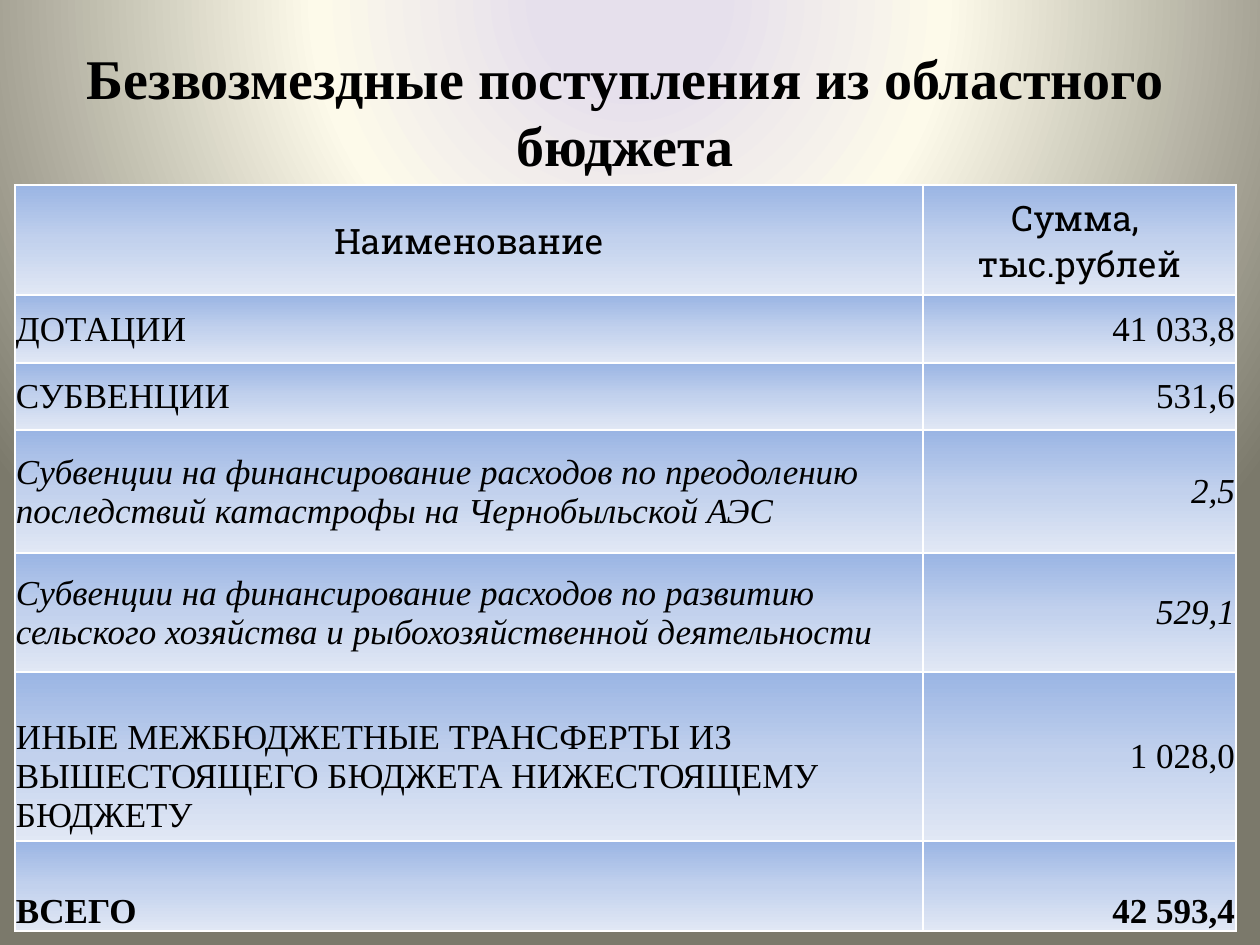
from lxml import etree
from pptx import Presentation
from pptx.dml.color import RGBColor
from pptx.enum.text import MSO_ANCHOR as Anchor, PP_ALIGN as Align
from pptx.oxml.ns import qn
from pptx.util import Pt

SCALE = 914400 / 126
SERIF, SLAB = "Times New Roman", "Roboto Slab"
BACKGROUND = [(11, "E6E0EC"), (40, "FDFAEA"), (100, "7B796B")]
CELL_FILL = [(0, "9AB5E4"), (50, "C2D1ED"), (100, "E1E8F5")]


def px(length):
    return round(length * SCALE)


def color(hex_code):
    return RGBColor.from_string(hex_code)


def add_color(parent, hex_code):
    etree.SubElement(parent, qn("a:srgbClr"), val=hex_code)


def set_gradient(fill, owner, stops):
    """Give the fill its stops and return its gradient element."""
    fill.gradient()
    gradient = next(owner.iter(qn("a:gradFill")))
    for child in list(gradient):
        gradient.remove(child)
    stop_list = etree.SubElement(gradient, qn("a:gsLst"))
    for position, hex_code in stops:
        stop = etree.SubElement(stop_list, qn("a:gs"), pos=str(position * 1000))
        add_color(stop, hex_code)
    return gradient


class SlideBuilder:
    text_color = "000000"
    border_color = "FFFFFF"
    table_size = 20

    def __init__(self, deck):
        self.slide = deck.slides.add_slide(deck.slide_layouts[5])

    def background(self, stops):
        gradient = set_gradient(self.slide.background.fill, self.slide.element, stops)
        circle = etree.SubElement(gradient, qn("a:path"), path="circle")
        etree.SubElement(circle, qn("a:fillToRect"),
                         l="50000", t="-80000", r="50000", b="180000")

    def run(self, para, text, size, font=SERIF, bold=False, italic=False):
        span = para.add_run()
        span.text = text
        span.font.name, span.font.size = font, Pt(size)
        span.font.bold, span.font.italic = bold, italic
        span.font.color.rgb = color(self.text_color)

    def title(self, text, left, top, width, height):
        box = self.slide.shapes.title
        box.left, box.top, box.width, box.height = map(px, (left, top, width, height))
        frame = box.text_frame
        frame.word_wrap = True
        frame.vertical_anchor = Anchor.TOP
        para = frame.paragraphs[0]
        para.alignment = Align.CENTER
        self.run(para, text, 32, bold=True)

    def table(self, left, top, columns, rows):
        table = self.slide.shapes.add_table(
            len(rows), len(columns), px(left), px(top),
            px(sum(columns)), px(sum(row[0] for row in rows))).table
        table.first_row = table.horz_banding = False
        for column, width in zip(table.columns, columns):
            column.width = px(width)
        for index, (height, *_) in enumerate(rows):
            table.rows[index].height = px(height)
        return table

    def cell(self, cell, lines, align, anchor=Anchor.MIDDLE, top=1, **style):
        cell.vertical_anchor = anchor
        cell.margin_left = cell.margin_right = px(1)
        cell.margin_top, cell.margin_bottom = px(top), 0
        para = cell.text_frame.paragraphs[0]
        para.alignment = align
        for index, line in enumerate(lines.split("\n")):
            if index:
                para.add_line_break()
            self.run(para, line, self.table_size, **style)
        self.cell_look(cell)

    def cell_look(self, cell):
        properties = cell._tc.get_or_add_tcPr()
        gradient = set_gradient(cell.fill, properties, CELL_FILL)
        etree.SubElement(gradient, qn("a:lin"), ang="5400000", scaled="0")
        for index, side in enumerate(("a:lnL", "a:lnR", "a:lnT", "a:lnB")):
            line = etree.Element(qn(side), w=str(Pt(1)))
            add_color(etree.SubElement(line, qn("a:solidFill")), self.border_color)
            properties.insert(index, line)


def main():
    deck = Presentation()
    deck.slide_width, deck.slide_height = px(1260), px(945)
    page = SlideBuilder(deck)
    page.background(BACKGROUND)
    page.title("Безвозмездные поступления из областного бюджета", 35, 37, 1181, 217)

    # Each row: height, name, amount, text style, extra room above the name
    italic, bold = {"italic": True}, {"bold": True, "anchor": Anchor.BOTTOM}
    rows = [
        (110, "Наименование", "Сумма, \nтыс.рублей", {"font": SLAB}, 1),
        (68, "ДОТАЦИИ", "41 033,8", {}, 1),
        (67, "СУБВЕНЦИИ", "531,6", {}, 1),
        (123, "Субвенции на финансирование расходов по преодолению "
              "последствий катастрофы на Чернобыльской АЭС", "2,5", italic, 1),
        (119, "Субвенции на финансирование расходов по развитию сельского "
              "хозяйства и рыбохозяйственной деятельности", "529,1", italic, 1),
        (169, "ИНЫЕ МЕЖБЮДЖЕТНЫЕ ТРАНСФЕРТЫ ИЗ ВЫШЕСТОЯЩЕГО БЮДЖЕТА "
              "НИЖЕСТОЯЩЕМУ БЮДЖЕТУ", "1 028,0", {}, 40),
        (90, "ВСЕГО", "42 593,4", bold, 1),
    ]
    table = page.table(15, 185, (908, 313), rows)
    for index, (_, name, amount, style, room) in enumerate(rows):
        header = index == 0
        page.cell(table.cell(index, 0), name,
                  Align.CENTER if header else Align.LEFT, top=room, **style)
        page.cell(table.cell(index, 1), amount,
                  Align.CENTER if header else Align.RIGHT, **style)

    deck.save("out.pptx")


if __name__ == "__main__":
    main()
